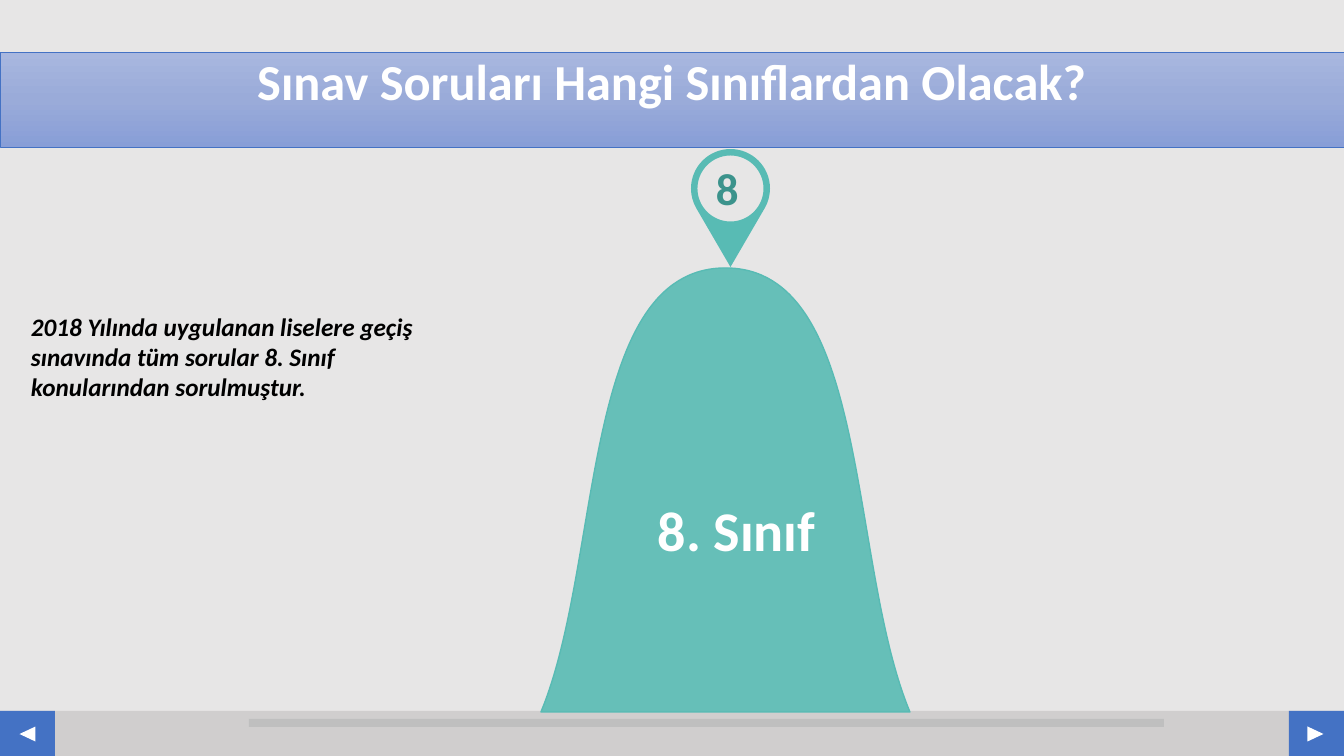
"""Builds the slide about which grades the exam questions come from."""
import copy
import math
import pptx
import pptx.util
import pptx.dml.color
import pptx.enum.shapes
import pptx.enum.text
import pptx.oxml
import pptx.oxml.ns

PX = 12192000 / 1344
FINE = 10
TEAL, BLUE, WHITE = "58BBB4", "4472C4", "FFFFFF"
KIND = pptx.enum.shapes.MSO_SHAPE
ALIGN = pptx.enum.text.PP_ALIGN
rgb = pptx.dml.color.RGBColor.from_string
qn = pptx.oxml.ns.qn

deck = pptx.Presentation()
deck.slide_width, deck.slide_height = round(1344 * PX), round(756 * PX)
slide = deck.slides.add_slide(deck.slide_layouts[6])
slide.background.fill.solid()
slide.background.fill.fore_color.rgb = rgb("E7E6E6")


def paint(shape, fill, line=None, width=1):
    shape.shadow.inherit = False
    shape.fill.solid()
    shape.fill.fore_color.rgb = rgb(fill)
    if line:
        shape.line.color.rgb = rgb(line)
        shape.line.width = pptx.util.Pt(width)
    else:
        shape.line.fill.background()


def write(shape, text, size, color, align=ALIGN.LEFT, wrap=True):
    frame = shape.text_frame
    frame.word_wrap = wrap
    frame.vertical_anchor = pptx.enum.text.MSO_ANCHOR.TOP
    frame.text = text
    para = frame.paragraphs[0]
    para.alignment = align
    font = para.runs[0].font
    font.name, font.size, font.bold = "Calibri", pptx.util.Pt(size), True
    font.color.rgb = rgb(color)
    return para


bars = [
    (0, 711, 1344, 45, "D0CECE"),
    (1289, 711, 55, 45, BLUE),
    (0, 711, 55, 45, BLUE),
    (249, 719, 915, 8, "BFBFBF"),
]
for *box, fill in bars:
    bar = slide.shapes.add_shape(KIND.RECTANGLE, *[round(n * PX) for n in box])
    paint(bar, fill)

for left, turn in [(1308, 90), (20, 270)]:
    box = [round(n * PX) for n in (left, 726, 15, 16)]
    arrow = slide.shapes.add_shape(KIND.ISOSCELES_TRIANGLE, *box)
    arrow.rotation = turn
    paint(arrow, WHITE)

box = [round(n * PX) for n in (0, 52, 1344, 95)]
title = slide.shapes.add_shape(KIND.RECTANGLE, *box)
paint(title, BLUE, BLUE, 0.5)
title.fill.gradient()
title.fill.gradient_angle = 270
stops = title.fill._xPr.find(qn("a:gradFill")).find(qn("a:gsLst"))
middle = copy.deepcopy(stops[0])
middle.set("pos", "50000")
stops.insert(1, middle)
for stop, color in zip(title.fill.gradient_stops, ["A8B7DF", "9AABD9", "889ED7"]):
    stop.color.rgb = rgb(color)
para = write(title, "Sınav Soruları Hangi Sınıflardan Olacak?", 36, WHITE, ALIGN.CENTER)
para.line_spacing = 0.9

bell = [(541, 712), (603, 563), (580, 268), (725.5, 268),
        (871, 268), (848, 563), (910, 712)]

hub, level = 730.5, 188.5
rings = []
for radius, turns in [(39.5, (150, 180, 270, 360, 390)), (33, (360, 270, 180, 90, 0))]:
    ring = []
    for start, end in zip(turns, turns[1:]):
        a, b = math.radians(start), math.radians(end)
        reach = 4 / 3 * math.tan((b - a) / 4)
        for angle, pull in [(a, 0), (a, reach), (b, -reach), (b, 0)]:
            x = math.cos(angle) - pull * math.sin(angle)
            y = math.sin(angle) + pull * math.cos(angle)
            ring.append((hub + radius * x, level + radius * y))
    rings.append([p for i, p in enumerate(ring) if i == 0 or i % 4])
rim, hole = rings
rim += [(hub, 267)] * 3

forms = []
for paths in [[bell], [rim, hole]]:
    (first, *rest), *more = [[(x * FINE, y * FINE) for x, y in path] for path in paths]
    pen = slide.shapes.build_freeform(*first, scale=PX / FINE)
    pen.add_line_segments(rest, close=True)
    for first, *rest in more:
        pen.move_to(*first)
        pen.add_line_segments(rest, close=True)
    form = pen.convert_to_shape()
    steps = list(form._element.iter(qn("a:lnTo")))
    for i in range(0, len(steps), 3):
        curve = pptx.oxml.parse_xml(f'<a:cubicBezTo {pptx.oxml.ns.nsdecls("a")}/>')
        steps[i].addprevious(curve)
        for step in steps[i:i + 3]:
            curve.append(step[0])
            step.getparent().remove(step)
    forms.append(form)
hill, pin = forms
paint(hill, TEAL, TEAL)
paint(pin, TEAL)
tint = hill.fill._xPr.find(qn("a:solidFill"))[0]
tint.append(pptx.oxml.parse_xml(
    f'<a:alpha {pptx.oxml.ns.nsdecls("a")} val="90000"/>'))

note = "2018 Yılında uygulanan liselere geçiş sınavında tüm sorular 8. Sınıf konularından sorulmuştur."
labels = [
    ((706, 156, 43, 64), "8", 32, "3C938C", False, False),
    ((648, 491, 205, 78), "8. Sınıf", 40, WHITE, False, True),
    ((21, 306, 405, 102), note, 18, "000000", True, True),
]
for box, text, size, color, slant, wrap in labels:
    label = slide.shapes.add_textbox(*[round(n * PX) for n in box])
    para = write(label, text, size, color, wrap=wrap)
    para.runs[0].font.italic = slant

deck.save("out.pptx")
